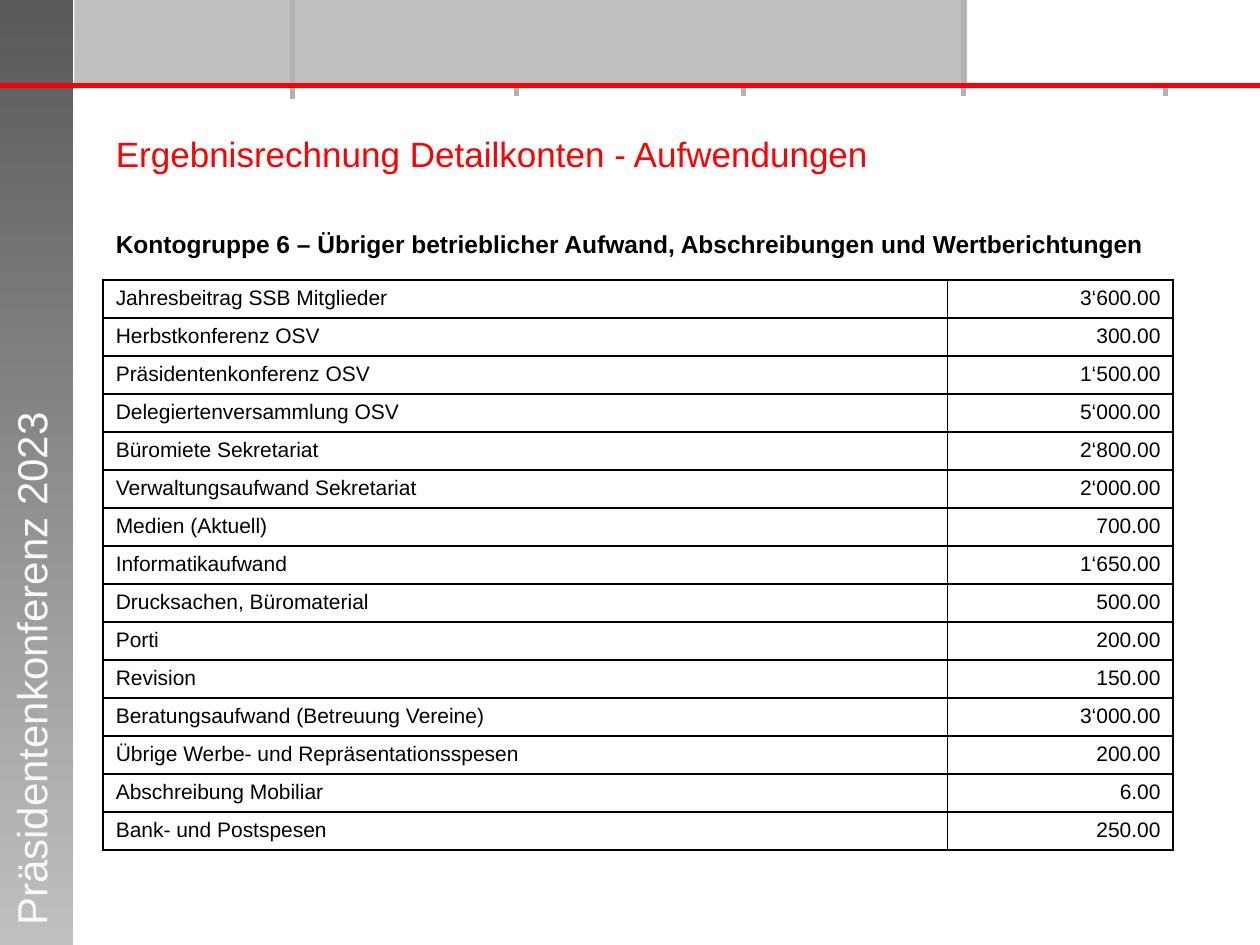
from lxml.etree import SubElement
from pptx import Presentation
from pptx.dml.color import RGBColor
from pptx.enum.shapes import MSO_CONNECTOR as Connector, MSO_SHAPE as Shape
from pptx.enum.text import MSO_ANCHOR as Anchor, MSO_AUTO_SIZE as AutoSize, PP_ALIGN as Align
from pptx.oxml.ns import qn
from pptx.util import Cm, Pt

COLORS = {
    "red": "FF0000", "black": "000000", "white": "FFFFFF", "label": "F8F8F8",
    "dark": "595959", "silver": "C0C0C0", "tick": "B2B2B2",
}
FORMATS = {
    "title": {"size": Pt(20), "bold": False},
    "subtitle": {"size": Pt(14), "bold": True},
    "label": {"size": Pt(24), "bold": False},
    "cell": {"size": Pt(12), "bold": False},
}
ACCOUNTS = [
    ("Jahresbeitrag SSB Mitglieder", "3‘600.00"),
    ("Herbstkonferenz OSV", "300.00"),
    ("Präsidentenkonferenz OSV", "1‘500.00"),
    ("Delegiertenversammlung OSV", "5‘000.00"),
    ("Büromiete Sekretariat", "2‘800.00"),
    ("Verwaltungsaufwand Sekretariat", "2‘000.00"),
    ("Medien (Aktuell)", "700.00"),
    ("Informatikaufwand", "1‘650.00"),
    ("Drucksachen, Büromaterial", "500.00"),
    ("Porti", "200.00"),
    ("Revision", "150.00"),
    ("Beratungsaufwand (Betreuung Vereine)", "3‘000.00"),
    ("Übrige Werbe- und Repräsentationsspesen", "200.00"),
    ("Abschreibung Mobiliar", "6.00"),
    ("Bank- und Postspesen", "250.00"),
]


def rgb(name):
    return RGBColor.from_string(COLORS[name])


class SlideBuilder:
    """Holds the font and the current slide; all lengths are in centimetres."""

    def __init__(self, slide, font="Arial"):
        self.s = slide
        self.font = font

    def add_text(self, tf, text, style, color, align=Align.LEFT):
        p = tf.paragraphs[0]
        p.alignment = align
        r = p.add_run()
        r.text = text
        for name, value in {"name": self.font, **FORMATS[style]}.items():
            setattr(r.font, name, value)
        r.font.color.rgb = rgb(color)
        return p

    def placeholder(self, sp, box, text, style, color):
        sp.left, sp.top, sp.width, sp.height = map(Cm, box)
        tf = sp.text_frame
        frame = {"word_wrap": True, "auto_size": AutoSize.NONE, "vertical_anchor": Anchor.TOP}
        for name, value in frame.items():
            setattr(tf, name, value)
        p = self.add_text(tf, text, style, color)
        p.space_before = Pt(0)
        pPr = p._p.get_or_add_pPr()
        pPr.set("marL", "0")
        pPr.set("indent", "0")
        SubElement(pPr, qn("a:buNone"))

    def rect(self, box, color, end_color=None):
        """Draw a borderless rectangle, shaded downwards if end_color is given."""
        sp = self.s.shapes.add_shape(Shape.RECTANGLE, *map(Cm, box))
        sp.shadow.inherit = False
        sp.line.fill.background()
        if end_color:
            sp.fill.gradient()
            sp.fill.gradient_angle = 270
            for stop, name in zip(sp.fill.gradient_stops, (color, end_color)):
                stop.color.rgb = rgb(name)
        else:
            sp.fill.solid()
            sp.fill.fore_color.rgb = rgb(color)

    def line(self, x1, y1, x2, y2, color):
        line = self.s.shapes.add_connector(Connector.STRAIGHT, *map(Cm, (x1, y1, x2, y2)))
        line.line.width = Pt(3)
        line.line.color.rgb = rgb(color)
        SubElement(line._element.spPr, qn("a:effectLst"))

    def side_label(self, box, text):
        sp = self.s.shapes.add_textbox(*map(Cm, box))
        sp.rotation = 270
        sp.text_frame.word_wrap = True
        self.add_text(sp.text_frame, text, "label", "label")

    def border(self, cell):
        tcPr = cell._tc.get_or_add_tcPr()
        for i, side in enumerate(("lnL", "lnR", "lnT", "lnB")):
            ln = SubElement(tcPr, qn(f"a:{side}"), w=str(Pt(1)))
            fill = SubElement(ln, qn("a:solidFill"))
            SubElement(fill, qn("a:srgbClr"), val=COLORS["black"])
            tcPr.insert(i, ln)

    def table(self, left, top, widths, height, rows):
        frame = self.s.shapes.add_table(
            len(rows), len(widths), *map(Cm, (left, top, sum(widths), height)))
        table = frame.table
        for column, width in zip(table.columns, widths):
            column.width = Cm(width)
        for row, values in zip(table.rows, rows):
            row.height = Cm(height / len(rows))
            for cell, text, align in zip(row.cells, values, (Align.LEFT, Align.RIGHT)):
                cell.fill.solid()
                cell.fill.fore_color.rgb = rgb("white")
                self.border(cell)
                self.add_text(cell.text_frame, text, "cell", "black", align)


def main():
    prs = Presentation()
    prs.slide_width, prs.slide_height = Cm(25.4), Cm(19.05)
    s = prs.slides.add_slide(prs.slide_layouts[1])
    b = SlideBuilder(s)

    rule_y, tick_end = 1.73, 1.93
    for x in (10.41, 14.99, 23.5):
        b.line(x, rule_y, x, tick_end, "tick")
    b.rect((0, 0, 1.47, 19.05), "dark", "silver")
    b.rect((1.5, 0, 18, rule_y), "silver")
    b.line(5.9, 0, 5.9, 2, "tick")
    b.line(19.43, 0, 19.43, tick_end, "tick")
    b.line(0, rule_y, 25.4, rule_y, "red")
    b.side_label((-4.88, 12.78, 11, 1.27), "Präsidentenkonferenz 2023")

    left = 2.08
    b.placeholder(s.shapes.title, (left, 2.55, 21.84, 1.1),
                  "Ergebnisrechnung Detailkonten - Aufwendungen", "title", "red")
    b.placeholder(s.placeholders[1], (left, 4.48, 21.84, 0.9),
                  "Kontogruppe 6 – Übriger betrieblicher Aufwand, "
                  "Abschreibungen und Wertberichtungen", "subtitle", "black")
    b.table(left, 5.64, (17.02, 4.55), 11.49, ACCOUNTS)
    prs.save("out.pptx")


if __name__ == "__main__":
    main()
